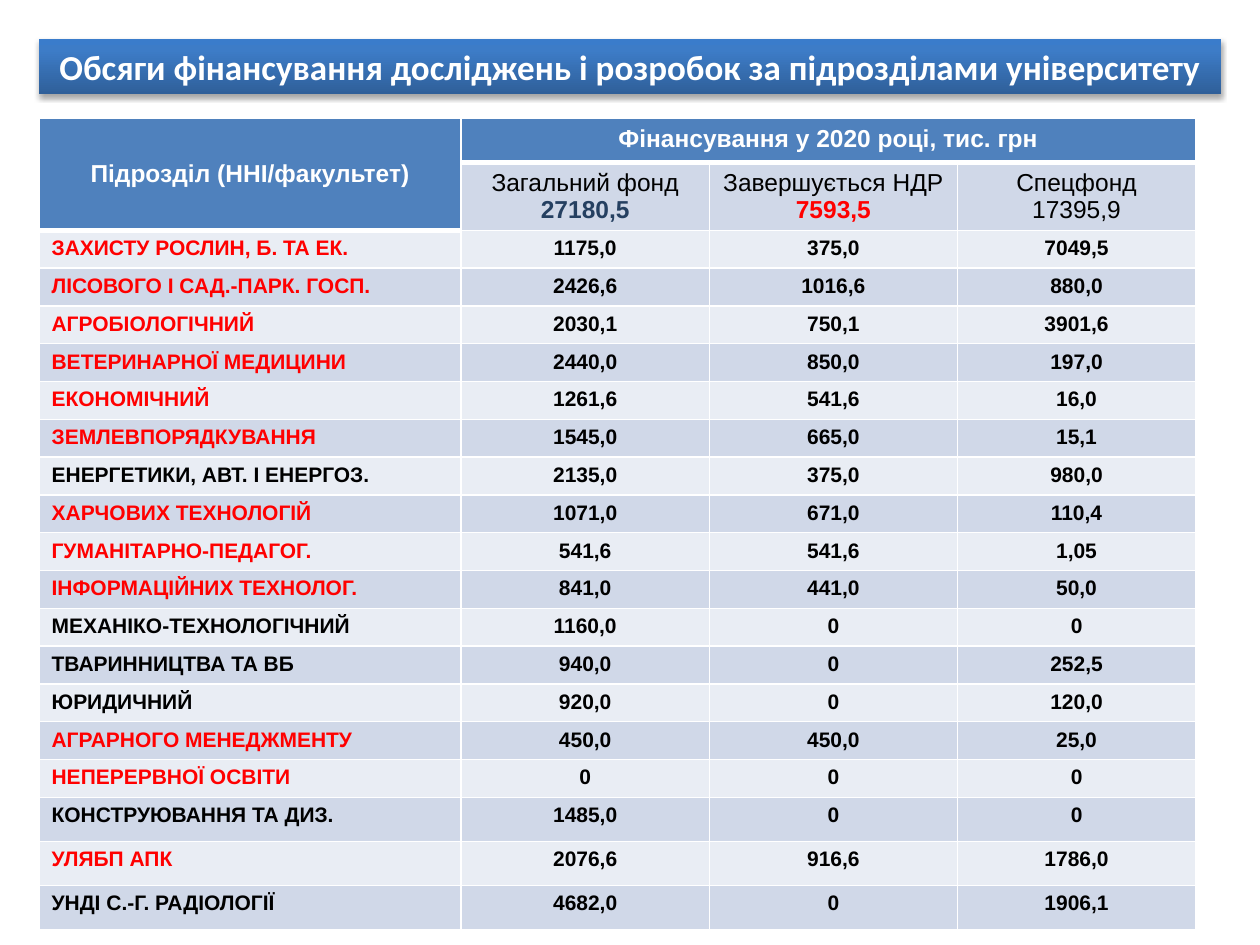
from pptx import Presentation
from pptx.dml.color import RGBColor as RGB
from pptx.enum.shapes import MSO_SHAPE as SHAPE
from pptx.enum.text import MSO_ANCHOR as ANCHOR, PP_ALIGN as ALIGN
from pptx.oxml.ns import qn
from pptx.util import Inches, Pt
from copy import deepcopy
from lxml.etree import SubElement

COLORS = {
    "white": "FFFFFF", "black": "000000", "red": "FF0000", "navy": "254061",
    "header": "4F81BD", "band_dark": "D0D8E8", "band_light": "E9EDF4",
    "grad_low": "2F5F99", "grad_mid": "3D7CC7", "grad_top": "3A7CCB",
}

TITLE = "Обсяги фінансування досліджень і розробок за підрозділами університету"
# Totals: heading, value, value colour, value bold
FUNDS = [
    ("Загальний фонд", "27180,5", "navy", True),
    ("Завершується НДР", "7593,5", "red", True),
    ("Спецфонд", "17395,9", "black", False),
]
# Units: name colour, name, three amounts
UNITS = [
    ("red", "ЗАХИСТУ РОСЛИН, Б. ТА ЕК.", "1175,0", "375,0", "7049,5"),
    ("red", "ЛІСОВОГО І САД.-ПАРК. ГОСП.", "2426,6", "1016,6", "880,0"),
    ("red", "АГРОБІОЛОГІЧНИЙ", "2030,1", "750,1", "3901,6"),
    ("red", "ВЕТЕРИНАРНОЇ МЕДИЦИНИ", "2440,0", "850,0", "197,0"),
    ("red", "ЕКОНОМІЧНИЙ", "1261,6", "541,6", "16,0"),
    ("red", "ЗЕМЛЕВПОРЯДКУВАННЯ", "1545,0", "665,0", "15,1"),
    ("black", "ЕНЕРГЕТИКИ, АВТ. І ЕНЕРГОЗ.", "2135,0", "375,0", "980,0"),
    ("red", "ХАРЧОВИХ ТЕХНОЛОГІЙ", "1071,0", "671,0", "110,4"),
    ("red", "ГУМАНІТАРНО-ПЕДАГОГ.", "541,6", "541,6", "1,05"),
    ("red", "ІНФОРМАЦІЙНИХ ТЕХНОЛОГ.", "841,0", "441,0", "50,0"),
    ("black", "МЕХАНІКО-ТЕХНОЛОГІЧНИЙ", "1160,0", "0", "0"),
    ("black", "ТВАРИННИЦТВА ТА ВБ", "940,0", "0", "252,5"),
    ("black", "ЮРИДИЧНИЙ", "920,0", "0", "120,0"),
    ("red", "АГРАРНОГО МЕНЕДЖМЕНТУ", "450,0", "450,0", "25,0"),
    ("red", "НЕПЕРЕРВНОЇ ОСВІТИ", "0", "0", "0"),
    ("black", "КОНСТРУЮВАННЯ ТА ДИЗ.", "1485,0", "0", "0"),
    ("red", "УЛЯБП АПК", "2076,6", "916,6", "1786,0"),
    ("black", "УНДІ С.-Г. РАДІОЛОГІЇ", "4682,0", "0", "1906,1"),
]
COL_WIDTHS = [3.35, 1.97, 1.97, 1.89]
ROW_HEIGHTS = [0.35] * 2 + [0.3] * 15 + [0.35] * 3


def rgb(name):
    return RGB.from_string(COLORS[name])


class Deck:
    """Holds the text style and the current slide."""

    def __init__(self, slide, font="Arial"):
        self.slide, self.font = slide, font

    def add_lines(self, tf, lines, align=ALIGN.CENTER, font=None):
        """Each line is (text, size, colour, bold)."""
        for i, (text, size, color, bold) in enumerate(lines):
            p = tf.add_paragraph() if i else tf.paragraphs[0]
            p.alignment = align
            r = p.add_run()
            r.text = text
            r.font.name, r.font.size, r.font.bold = font or self.font, Pt(size), bold
            r.font.color.rgb = rgb(color)

    def banner(self, x, y, w, h, text, stops):
        sp = self.slide.shapes.add_shape(
            SHAPE.RECTANGLE, Inches(x), Inches(y), Inches(w), Inches(h))
        sp.line.fill.background()
        # Three-stop gradient, running upwards
        sp.fill.gradient()
        sp.fill.gradient_angle = 90
        gs_list = sp._element.spPr.find(qn("a:gradFill")).find(qn("a:gsLst"))
        gs_list.append(deepcopy(gs_list[-1]))
        for stop, (position, color) in zip(sp.fill.gradient_stops, stops):
            stop.position, stop.color.rgb = position, rgb(color)
        # Soft shadow below
        sp.shadow.inherit = False
        effects = sp._element.spPr.find(qn("a:effectLst"))
        shadow = SubElement(effects, qn("a:outerShdw"), blurRad=str(Pt(3.1)),
                            dist=str(Pt(1.8)), dir="5400000", rotWithShape="0")
        color = SubElement(shadow, qn("a:srgbClr"), val=COLORS["black"])
        SubElement(color, qn("a:alpha"), val="35000")
        tf = sp.text_frame
        tf.word_wrap = True
        tf.vertical_anchor = ANCHOR.MIDDLE
        self.add_lines(tf, [(text, 20, "white", True)], font="Calibri")

    def table(self, x, y, widths, heights):
        table = self.slide.shapes.add_table(
            len(heights), len(widths), Inches(x), Inches(y),
            Inches(sum(widths)), Inches(sum(heights))).table
        for col, w in zip(table.columns, widths):
            col.width = Inches(w)
        for row, h in zip(table.rows, heights):
            row.height = Inches(h)
        return table

    def cell(self, cell, fill, lines=(), align=ALIGN.CENTER, bottom=1, top=1):
        tc_pr = cell._tc.get_or_add_tcPr()
        for side, width in (("L", 1), ("R", 1), ("T", top), ("B", bottom)):
            ln = SubElement(tc_pr, qn("a:ln" + side), w=str(Pt(width)))
            solid = SubElement(ln, qn("a:solidFill"))
            SubElement(solid, qn("a:srgbClr"), val=COLORS["white"])
        cell.fill.solid()
        cell.fill.fore_color.rgb = rgb(fill)
        self.add_lines(cell.text_frame, lines, align)


def main():
    prs = Presentation()
    prs.slide_width, prs.slide_height = Inches(10), Inches(7.5)
    deck = Deck(prs.slides.add_slide(prs.slide_layouts[6]))

    # Title
    deck.banner(0.31, 0.31, 9.38, 0.44, TITLE,
                [(0, "grad_low"), (0.8, "grad_mid"), (1, "grad_top")])

    # Table heading
    table = deck.table(0.31, 0.94, COL_WIDTHS, ROW_HEIGHTS)
    heads = {0: "Підрозділ (ННІ/факультет)", 1: "Фінансування у 2020 році, тис. грн"}
    for c in range(len(COL_WIDTHS)):
        lines = [(heads[c], 14, "white", True)] if c in heads else []
        deck.cell(table.cell(0, c), "header", lines, bottom=3)
    deck.cell(table.cell(1, 0), "header", bottom=3)
    table.cell(0, 0).merge(table.cell(1, 0))
    table.cell(0, 0).vertical_anchor = ANCHOR.MIDDLE
    table.cell(0, 1).merge(table.cell(0, 3))

    # Fund totals
    for c, (name, total, color, bold) in enumerate(FUNDS, 1):
        deck.cell(table.cell(1, c), "band_dark",
                  [(name, 14, "black", False), (total, 14, color, bold)], top=3)

    # Units
    for i, (color, name, *amounts) in enumerate(UNITS):
        band = "band_dark" if i % 2 else "band_light"
        row = i + 2
        top = 1 if i else 3
        deck.cell(table.cell(row, 0), band, [(name, 12, color, True)], ALIGN.LEFT, top=top)
        for c, amount in enumerate(amounts, 1):
            deck.cell(table.cell(row, c), band, [(amount, 12, "black", True)])

    prs.save("out.pptx")


if __name__ == "__main__":
    main()
